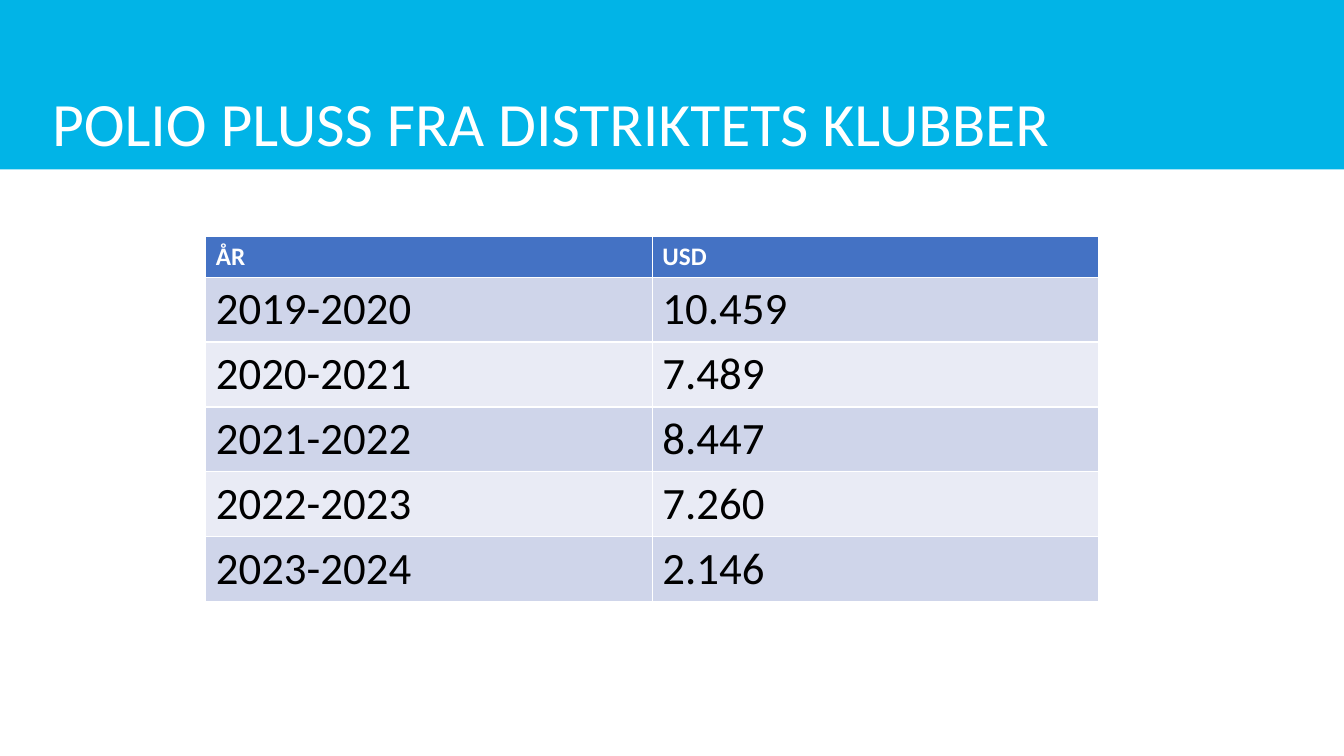
from pptx import Presentation
from pptx.dml.color import RGBColor
from pptx.enum.shapes import MSO_SHAPE
from pptx.enum.text import MSO_ANCHOR, MSO_AUTO_SIZE, PP_ALIGN
from pptx.util import Pt

WIDTH, HEIGHT = 960, 540
BAND = 121
ROWS = [
    ("ÅR", "USD"),
    ("2019-2020", "10.459"),
    ("2020-2021", "7.489"),
    ("2021-2022", "8.447"),
    ("2022-2023", "7.260"),
    ("2023-2024", "2.146"),
]


def paint(fill, color):
    fill.solid()
    fill.fore_color.rgb = RGBColor.from_string(color)


def style(para, size, color, bold=False):
    font = para.font
    font.name = "Calibri"
    font.size = Pt(size)
    font.bold = bold
    font.color.rgb = RGBColor.from_string(color)


def add_band(slide, color):
    band = slide.shapes.add_shape(MSO_SHAPE.RECTANGLE, 0, 0, Pt(WIDTH), Pt(BAND))
    band.shadow.inherit = False
    paint(band.fill, color)
    band.line.fill.background()
    slide.shapes.title.element.addprevious(band.element)


def set_title(slide, text):
    title = slide.shapes.title
    title.left, title.top = Pt(30), Pt(0)
    title.width, title.height = Pt(906), Pt(BAND)
    frame = title.text_frame
    frame.text = text
    frame.word_wrap = True
    frame.auto_size = MSO_AUTO_SIZE.NONE
    frame.vertical_anchor = MSO_ANCHOR.BOTTOM
    frame.margin_left = frame.margin_right = frame.margin_bottom = Pt(7.2)
    frame.margin_top = Pt(0)
    para = frame.paragraphs[0]
    para.alignment = PP_ALIGN.LEFT
    para.line_spacing = 0.9
    style(para, 44, "FFFFFF")


def add_grid(slide, rows, left, top, width, head, body):
    height = head + body * (len(rows) - 1)
    table = slide.shapes.add_table(
        len(rows), len(rows[0]), Pt(left), Pt(top), Pt(width), Pt(height)
    ).table
    for i, row in enumerate(rows):
        table.rows[i].height = Pt(body if i else head)
        for j, text in enumerate(row):
            cell = table.cell(i, j)
            cell.text = text
            para = cell.text_frame.paragraphs[0]
            if i == 0:
                paint(cell.fill, "4472C4")
                style(para, 18, "FFFFFF", True)
            else:
                paint(cell.fill, "CFD5EA" if i % 2 else "E9EBF5")
                style(para, 32, "000000")


def main():
    deck = Presentation()
    deck.slide_width, deck.slide_height = Pt(WIDTH), Pt(HEIGHT)
    slide = deck.slides.add_slide(deck.slide_layouts[5])
    add_band(slide, "01B4E7")
    set_title(slide, "POLIO PLUSS FRA DISTRIKTETS KLUBBER")
    add_grid(slide, ROWS, 147, 168.8, 638, 29, 46.3)
    deck.save("out.pptx")


if __name__ == "__main__":
    main()
